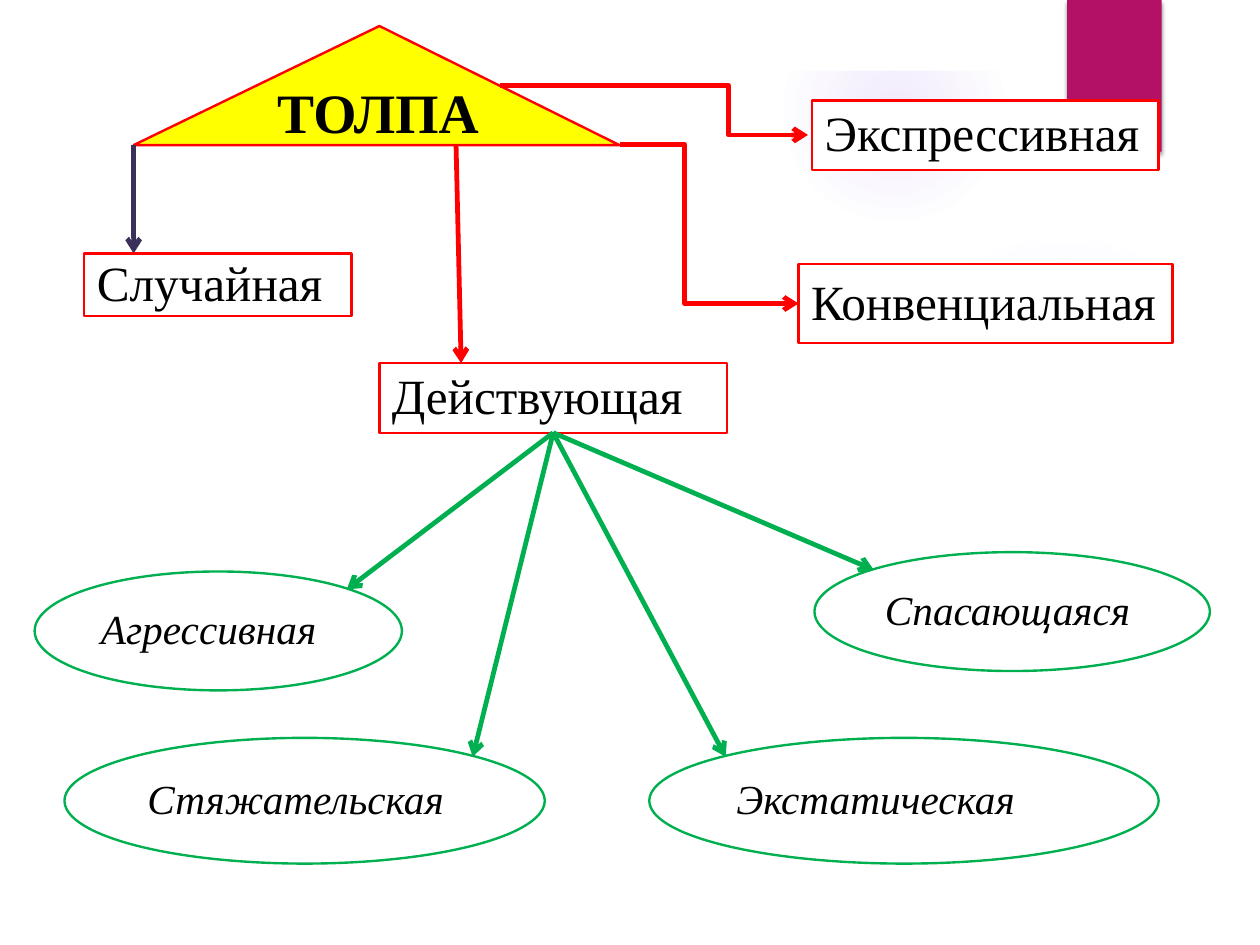
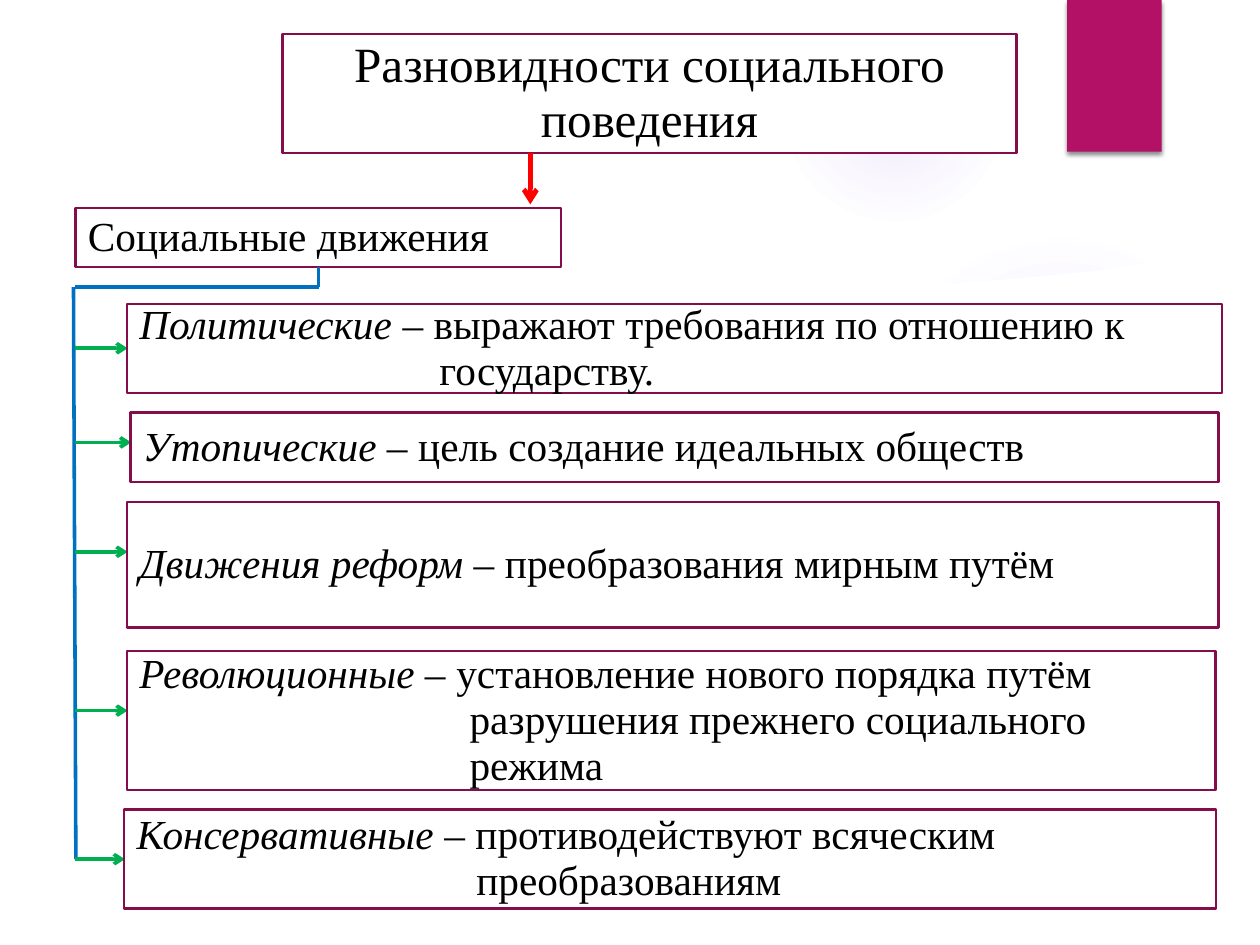
from pptx import Presentation
from pptx.dml.color import RGBColor
from pptx.enum.shapes import MSO_CONNECTOR, MSO_SHAPE
from pptx.enum.text import MSO_ANCHOR, MSO_AUTO_SIZE, PP_ALIGN
from pptx.oxml import parse_xml
from pptx.oxml.ns import nsdecls, qn
from pptx.util import Pt

FONT = "Times New Roman"
C = {"white": "FFFFFF", "black": "000000", "yellow": "FFFF00", "red": "FF0000",
     "green": "00B050", "blue": "0070C0", "navy": "3B3059", "wine": "840D4B",
     "magenta": "B31166", "violet": "9B6BF2"}


def style(sp, paras=(), size=31, line=None, fill="white", align=PP_ALIGN.LEFT):
    """Format a shape; each paragraph is (indent, [(text, italic), ...])."""
    sp.shadow.inherit = False
    if fill:
        sp.fill.solid()
        sp.fill.fore_color.rgb = RGBColor.from_string(C[fill])
    else:
        sp.fill.background()
    if line:
        sp.line.color.rgb = RGBColor.from_string(C[line])
        sp.line.width = Pt(1.5)
    else:
        sp.line.fill.background()
    if not paras:
        return
    tf = sp.text_frame
    tf.word_wrap = True
    tf.auto_size = MSO_AUTO_SIZE.NONE
    tf.vertical_anchor = MSO_ANCHOR.MIDDLE
    tf.margin_left = tf.margin_right = Pt(7.9)
    tf.margin_top = tf.margin_bottom = Pt(4)
    for i, (indent, runs) in enumerate(paras):
        p = tf.add_paragraph() if i else tf.paragraphs[0]
        p.alignment = align
        p.line_spacing = 0.93
        if indent:
            p._p.get_or_add_pPr().set("marL", str(Pt(indent)))
        for text, italic in runs:
            r = p.add_run()
            r.text = text
            r.font.name = FONT
            r.font.size = Pt(size)
            r.font.italic = italic
            r.font.color.rgb = RGBColor.from_string(C["black"])


def link(s, ends, color, width=3, arrow=True, bend=None):
    """Draw a line between two points, as an elbow if bend is given."""
    kind = MSO_CONNECTOR.ELBOW if bend else MSO_CONNECTOR.STRAIGHT
    cx = s.shapes.add_connector(kind, *[Pt(v) for v in ends])
    cx.line.color.rgb = RGBColor.from_string(C[color])
    cx.line.width = Pt(width)
    spPr = cx.element.spPr
    if arrow:
        spPr.find(qn("a:ln")).append(
            parse_xml(f'<a:tailEnd {nsdecls("a")} type="arrow"/>'))
    if bend:
        geom = spPr.find(qn("a:prstGeom"))
        for av in geom.findall(qn("a:avLst")):
            geom.remove(av)
        geom.append(parse_xml(f'<a:avLst {nsdecls("a")}><a:gd name="adj1" '
                              f'fmla="val {round(bend * 100000)}"/></a:avLst>'))
    spPr.append(parse_xml(f'<a:effectLst {nsdecls("a")}/>'))


prs = Presentation()
prs.slide_width, prs.slide_height = Pt(793.75), Pt(595.25)
layout = prs.slide_layouts[5]
s = prs.slides.add_slide(layout)

# Shared background: soft glows, white sheet, top band and bookmark, moved to the layout
decor = []
for x, y, d, stops in [(546.5, 145.4, 244.8, [(0, 7), (36, 6), (69, 0)]),
                       (493.9, 0, 139, [(0, 14), (36, 7), (73, 0)])]:
    glow = s.shapes.add_shape(MSO_SHAPE.OVAL, Pt(x), Pt(y), Pt(d), Pt(d))
    style(glow, fill=None)
    gs = "".join(f'<a:gs pos="{pos * 1000}"><a:srgbClr val="{C["violet"]}">'
                 f'<a:alpha val="{alpha * 1000}"/></a:srgbClr></a:gs>'
                 for pos, alpha in stops)
    spPr = glow.element.spPr
    spPr.replace(spPr.find(qn("a:noFill")), parse_xml(
        f'<a:gradFill {nsdecls("a")}><a:gsLst>{gs}</a:gsLst><a:path path="circle">'
        '<a:fillToRect l="50000" t="50000" r="50000" b="50000"/></a:path></a:gradFill>'))
    decor.append(glow)

fb = s.shapes.build_freeform(41.8, 161.3, Pt(1))
fb.add_line_segments([(137.5, 172), (268.6, 182.2), (406.1, 185.8), (496, 185),
                      (559.4, 182.2), (622.8, 177.1), (687.6, 170.6), (751.7, 161.3),
                      (793.75, 161.3), (793.75, 555), (41.8, 555)], close=True)
sheet = fb.convert_to_shape()
style(sheet)
band = s.shapes.add_shape(MSO_SHAPE.RECTANGLE, 0, 0, prs.slide_width, Pt(44.6))
style(band)
bookmark = s.shapes.add_shape(MSO_SHAPE.RECTANGLE, Pt(672.2), 0, Pt(59.6), Pt(95.5))
style(bookmark, fill="magenta")
bookmark.element.spPr.find(qn("a:effectLst")).append(parse_xml(
    f'<a:outerShdw {nsdecls("a")} blurRad="{Pt(3)}" dist="{Pt(2)}" dir="5400000">'
    f'<a:srgbClr val="{C["black"]}"><a:alpha val="45000"/></a:srgbClr></a:outerShdw>'))
for sp in decor + [sheet, band, bookmark]:
    layout.shapes.element.append(sp.element)

# Slide 1: kinds of crowd
roof = s.shapes.add_shape(MSO_SHAPE.ISOSCELES_TRIANGLE, Pt(84.2), Pt(16.4), Pt(306), Pt(75))
roof.adjustments[0] = 0.506
style(roof, line="red", fill="yellow")
title = s.shapes.title
title.left, title.top, title.width, title.height = Pt(161.6), Pt(53.8), Pt(153), Pt(37.5)
style(title, [(0, [("ТОЛПА", False)])], 35, fill=None, align=PP_ALIGN.CENTER)
title.text_frame.paragraphs[0].runs[0].font.bold = True
s.shapes.element.append(title.element)  # in front of the roof

link(s, (84.2, 91.2, 84.2, 159.6), "navy")
link(s, (315, 54, 509, 85), "red", bend=0.742)
link(s, (390.6, 91.2, 503, 191.2), "red", bend=0.361)
link(s, (287.3, 91.2, 290.5, 228.7), "red")
for text, rect in [("Случайная", (53.1, 159.6, 168.5, 39.6)),
                   ("Экспрессивная", (511.6, 63.2, 218.2, 43.9)),
                   ("Конвенциальная", (503, 166.3, 235.6, 49.9)),
                   ("Действующая", (239, 228.7, 218.9, 43.9))]:
    sp = s.shapes.add_shape(MSO_SHAPE.RECTANGLE, *[Pt(v) for v in rect])
    style(sp, [(0, [(text, False)])], line="red")

# Arrows end on the ellipse outline at 45 degrees; side is the share of its width
for text, (x, y, w, h), side in [("Агрессивная", (21.8, 360, 231.4, 74.9), 0.85),
                                 ("Спасающаяся", (513.1, 347.8, 249.1, 74.9), 0.15),
                                 ("Стяжательская", (40.6, 464.8, 302.6, 79.2), 0.85),
                                 ("Экстатическая", (409, 464.8, 320.9, 79.2), 0.15)]:
    link(s, (348.5, 272.6, x + w * side, y + h * 0.15), "green")
    sp = s.shapes.add_shape(MSO_SHAPE.OVAL, Pt(x), Pt(y), Pt(w), Pt(h))
    style(sp, [(0, [(text, True)])], 26, "green")

# Slide 2: social movements
s = prs.slides.add_slide(layout)
title = s.shapes.title
title.left, title.top, title.width, title.height = Pt(177.9), Pt(21.6), Pt(462.4), Pt(74.9)
style(title, [(0, [("Разновидности социального поведения", False)])],
      line="wine", align=PP_ALIGN.CENTER)
link(s, (334.1, 96.3, 334.1, 128.7), "red")
sp = s.shapes.add_shape(MSO_SHAPE.RECTANGLE, Pt(47.5), Pt(131), Pt(306), Pt(37.4))
style(sp, [(0, [("Социальные движения", False)])], 26, "wine")
for ends in [(200.7, 168.5, 200.7, 180.9), (47.5, 180.9, 200.7, 180.9),
             (46.3, 180.9, 47.8, 541.2)]:
    link(s, ends, "blue", 2.25, arrow=False)

movements = [
    ((79.9, 191.4, 689.8, 56.2), 219.4, "Политические",
     " – выражают требования по отношению к", 189, ["государству."]),
    ((82.2, 259.9, 685.6, 43.9), 278.7, "Утопические – ",
     "цель создание идеальных обществ", 0, []),
    ((79.9, 316.2, 687.8, 79.2), 347.6, "Движения реформ – ",
     "преобразования мирным путём", 0, []),
    ((79.9, 410.1, 685.8, 87.6), 447.6, "Революционные – ",
     "установление нового порядка путём", 208,
     ["разрушения прежнего социального", "режима"]),
    ((78.2, 509.8, 687.8, 62.6), 541.2, "Консервативные ",
     "– противодействуют всяческим", 214, ["преобразованиям"]),
]
for rect, y, name, meaning, indent, more in movements:
    link(s, (47.5, y, rect[0] + 0.5, y), "green", 2.25)
    sp = s.shapes.add_shape(MSO_SHAPE.RECTANGLE, *[Pt(v) for v in rect])
    paras = [(0, [(name, True), (meaning, False)])]
    paras += [(indent, [(text, False)]) for text in more]
    style(sp, paras, 26, "wine")

prs.save("out.pptx")
